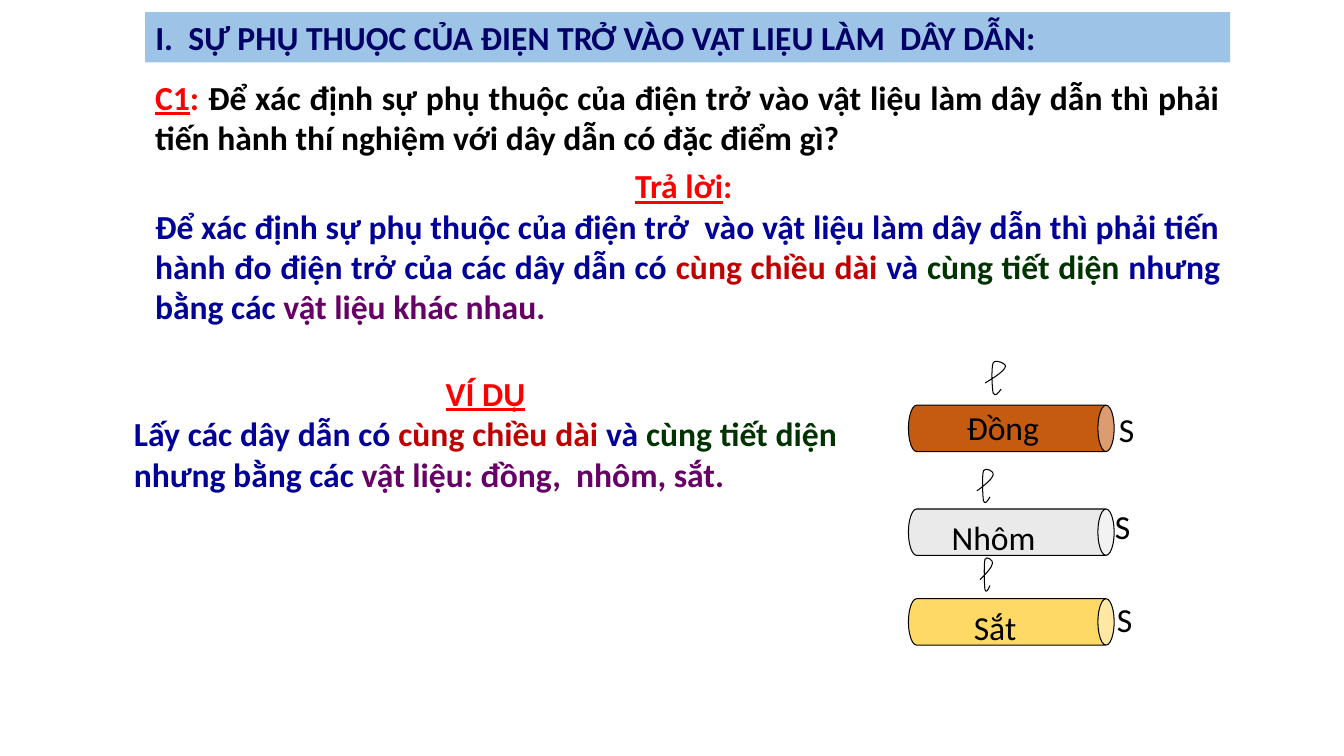
"""Build a slide on how resistance depends on the material of a wire."""
from lxml import etree
from pptx import Presentation, util as u
from pptx.dml.color import RGBColor
from pptx.enum import shapes, text
from pptx.oxml import ns

BLACK = RGBColor(0x00, 0x00, 0x00)
RED = RGBColor(0xFF, 0x00, 0x00)
NAVY = RGBColor(0x00, 0x00, 0x66)
BLUE = RGBColor(0x00, 0x00, 0x99)
CRIMSON = RGBColor(0xC0, 0x00, 0x00)
GREEN = RGBColor(0x00, 0x33, 0x00)
PURPLE = RGBColor(0x66, 0x00, 0x66)
SKY = RGBColor(0x9D, 0xC3, 0xE6)
COPPER = RGBColor(0xC5, 0x5A, 0x11)
ALUMINIUM = RGBColor(0xEA, 0xEA, 0xEA)
IRON = RGBColor(0xFF, 0xD9, 0x66)
LEFT, CENTER, JUSTIFY = text.PP_ALIGN.LEFT, text.PP_ALIGN.CENTER, text.PP_ALIGN.JUSTIFY
FIXED, GROW = text.MSO_AUTO_SIZE.NONE, text.MSO_AUTO_SIZE.SHAPE_TO_FIT_TEXT


def write(box, paragraphs, bold=True, wrap=True, fit=GROW):
    """Fill a box with (alignment, [(words, colour, underline)]) paragraphs."""
    frame = box.text_frame
    layout = {"word_wrap": wrap, "vertical_anchor": text.MSO_ANCHOR.TOP, "auto_size": fit}
    for name, value in layout.items():
        setattr(frame, name, value)
    for index, (alignment, spans) in enumerate(paragraphs):
        para = frame.add_paragraph() if index else frame.paragraphs[0]
        para.alignment = alignment
        for words, colour, underline in spans:
            span = para.add_run()
            span.text = words
            look = {"name": "Calibri", "size": u.Pt(24), "bold": bold, "underline": underline}
            for name, value in look.items():
                setattr(span.font, name, value)
            span.font.color.rgb = colour


def outline(shape):
    """Give a shape a thin black line and no shadow."""
    shape.shadow.inherit = False
    shape.line.color.rgb = BLACK
    shape.line.width = u.Pt(0.75)


deck = Presentation()
deck.slide_width, deck.slide_height = u.Inches(13.33), u.Inches(7.5)
page = deck.slides.add_slide(deck.slide_layouts[5])

heading = page.shapes.title
place = {"left": 1.44, "top": 0.12, "width": 10.76, "height": 0.5}
for name, value in place.items():
    setattr(heading, name, u.Inches(value))
heading.fill.solid()
heading.fill.fore_color.rgb = SKY
write(heading, [(LEFT, [("I.  SỰ PHỤ THUỘC CỦA ĐIỆN TRỞ VÀO VẬT LIỆU LÀM  DÂY DẪN:", NAVY, False)])],
      fit=FIXED)

same_size = [("cùng chiều dài ", CRIMSON, False), ("và ", BLUE, False),
             ("cùng tiết diện ", GREEN, False)]
question = [
    (JUSTIFY, [("C1", RED, True), (": ", RED, False),
               ("Để xác định sự phụ thuộc của điện trở vào vật liệu làm dây dẫn thì phải "
                "tiến hành thí nghiệm với dây dẫn có đặc điểm gì? ", BLACK, False)])]
answer = [
    (CENTER, [("Trả lời", RED, True), (": ", RED, False)]),
    (JUSTIFY, [("Để xác định sự phụ thuộc của điện trở  vào vật liệu làm dây dẫn thì phải "
                "tiến hành đo điện trở của các dây dẫn có ", BLUE, False), *same_size,
               ("nhưng bằng các ", BLUE, False), ("vật liệu khác nhau.", PURPLE, False)])]
example = [
    (CENTER, [("VÍ DỤ", RED, True)]),
    (JUSTIFY, [("Lấy các dây dẫn có ", BLUE, False), *same_size,
               ("nhưng bằng các ", BLUE, False),
               ("vật liệu: đồng,  nhôm, sắt.", PURPLE, False)])]
for left, top, width, height, paragraphs in [
        (1.44, 0.71, 10.76, 0.91, question),
        (1.44, 1.59, 10.76, 1.72, answer),
        (1.23, 3.65, 7.17, 1.72, example)]:
    box = page.shapes.add_textbox(*map(u.Inches, (left, top, width, height)))
    write(box, paragraphs)

CURL_WIDTH = 0.21
CURL = [(0, 0.24), (0.1, 0.18), (0.19, 0.12), (0.2, 0.08), (0.22, 0.05), (0.1, 0),
        (0.08, 0.04), (0.06, 0.09), (0.07, 0.3), (0.08, 0.34), (0.1, 0.38),
        (0.13, 0.34), (0.16, 0.3)]
wires = [
    ("Đồng", COPPER, 3.23, (9.49, 3.99, 1.01), (9.77, 3.56, 0.21), (11, 4.01)),
    ("Nhôm", ALUMINIUM, 4.26, (9.34, 5.08, 1.1), (9.69, 4.63, 0.17), (10.96, 4.97)),
    ("Sắt", IRON, 5.15, (9.56, 5.97, 0.71), (9.72, 5.51, 0.13), (10.98, 5.89))]
for metal, colour, wire_top, label, curl, section in wires:
    group = page.shapes.add_group_shape().shapes
    wire = group.add_shape(shapes.MSO_SHAPE.CAN,
                           *map(u.Inches, (9.8, wire_top, 0.46, 2.04)))
    wire.rotation = 90
    wire.adjustments[0] = 0.35
    wire.fill.solid()
    wire.fill.fore_color.rgb = colour
    outline(wire)

    curl_left, curl_top, curl_width = curl
    stretch = curl_width / CURL_WIDTH
    trace = [(u.Inches(curl_left + x * stretch), u.Inches(curl_top + y)) for x, y in CURL]
    builder = group.build_freeform(*trace[0])
    builder.add_line_segments(trace[1:], close=False)
    length_sign = builder.convert_to_shape()
    length_sign.fill.background()
    outline(length_sign)
    segments = list(length_sign.element.iter(ns.qn("a:lnTo")))
    track = segments[0].getparent()
    for start in range(0, len(segments), 3):
        bend = etree.SubElement(track, ns.qn("a:cubicBezTo"))
        for segment in segments[start:start + 3]:
            bend.append(segment[0])
            track.remove(segment)

    for words, (left, top, width) in [(metal, label), ("S", (*section, 0.36))]:
        box = group.add_textbox(*map(u.Inches, (left, top, width, 0.5)))
        write(box, [(LEFT, [(words, BLACK, False)])], bold=False, wrap=False)

deck.save("out.pptx")
